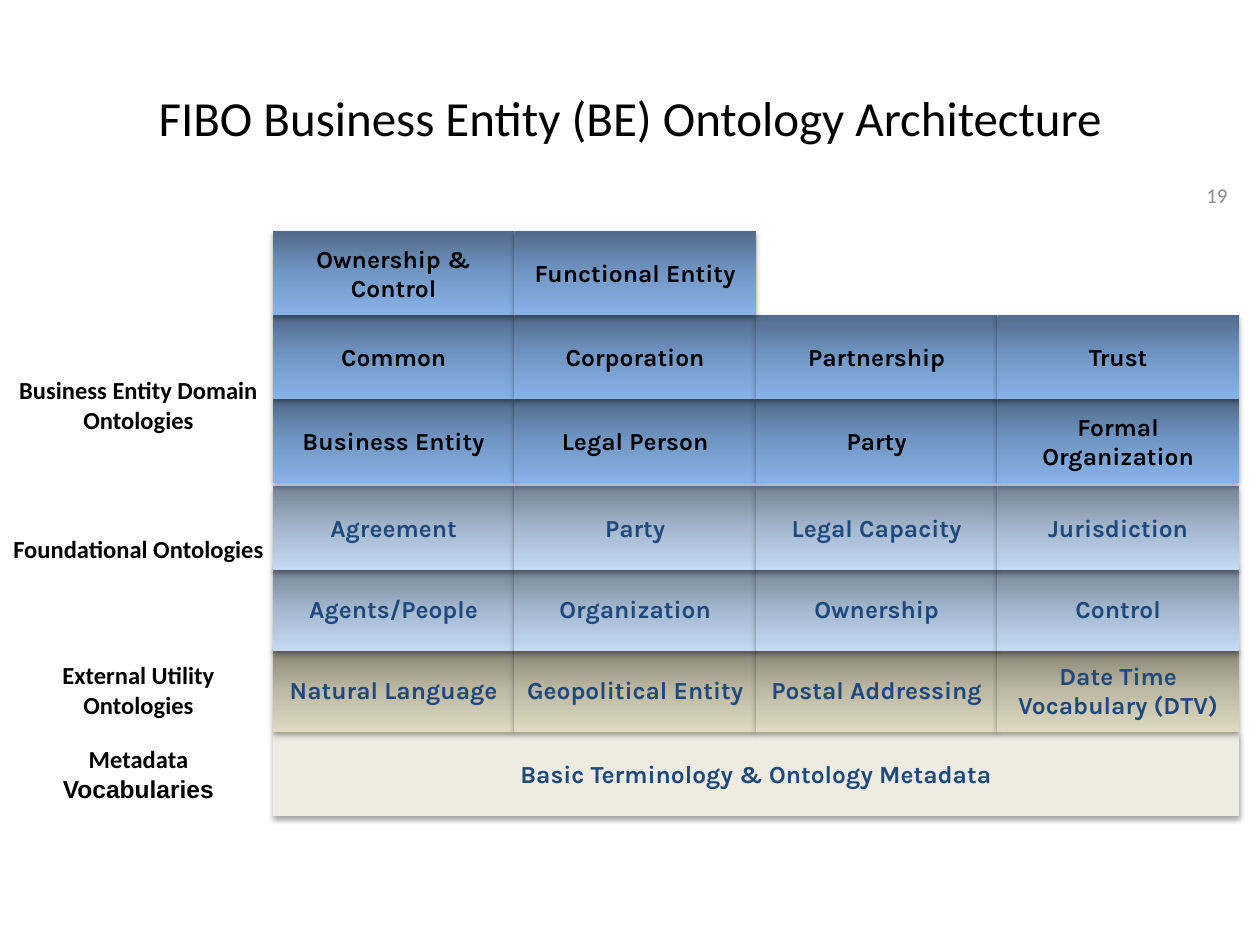
from copy import deepcopy

from lxml.etree import SubElement
from pptx import Presentation
from pptx.dml.color import RGBColor
from pptx.enum.shapes import MSO_SHAPE as Shape
from pptx.enum.text import MSO_ANCHOR as Anchor, PP_ALIGN as Align
from pptx.oxml.ns import qn
from pptx.util import Emu, Pt

BLACK = RGBColor(0x00, 0x00, 0x00)
GREY = RGBColor(0x8C, 0x8C, 0x8C)
NAVY = RGBColor(0x1F, 0x49, 0x7D)
CREAM = RGBColor(0xEE, 0xEC, 0xE1)
DOMAIN = (RGBColor(0x50, 0x6A, 0x8A), RGBColor(0x72, 0x97, 0xC5), RGBColor(0x87, 0xB3, 0xE9))
FOUNDATION = (RGBColor(0x74, 0x81, 0x91), RGBColor(0xA4, 0xB7, 0xCE), RGBColor(0xC3, 0xD9, 0xF4))
UTILITY = (RGBColor(0x84, 0x82, 0x73), RGBColor(0xBC, 0xB8, 0xA3), RGBColor(0xDF, 0xDB, 0xC2))

GRID_LEFT, GRID_WIDTH, COLUMNS, ROW_HEIGHT = 273, 966, 4, 84
LABEL_WIDTH, LABEL_HEIGHT = 277, 72

LAYERS = [
    (648, UTILITY, NAVY, ["Natural Language", "Geopolitical Entity",
                          "Postal Addressing", "Date Time Vocabulary (DTV)"]),
    (567, FOUNDATION, NAVY, ["Agents/People", "Organization", "Ownership", "Control"]),
    (486, FOUNDATION, NAVY, ["Agreement", "Party", "Legal Capacity", "Jurisdiction"]),
    (399, DOMAIN, BLACK, ["Business Entity", "Legal Person", "Party", "Formal Organization"]),
    (315, DOMAIN, BLACK, ["Common", "Corporation", "Partnership", "Trust"]),
    (231, DOMAIN, BLACK, ["Ownership & Control", "Functional Entity"]),
]

LABELS = [
    (369, [("Business Entity Domain Ontologies", "Calibri")]),
    (528, [("Foundational Ontologies", "Calibri")]),
    (654, [("External Utility Ontologies", "Calibri")]),
    (738, [("Metadata", "Calibri"), ("Vocabularies", "Arial")]),
]


def px(length):
    return Emu(round(length * 914400 / 126))


class ArchitectureSlide:
    def __init__(self, presentation):
        self.slide = presentation.slides.add_slide(presentation.slide_layouts[6])

    def add_lines(self, shape, lines, size, color, bold, align, anchor):
        frame = shape.text_frame
        frame.word_wrap = True
        frame.vertical_anchor = anchor
        for index, (text, font_name) in enumerate(lines):
            paragraph = frame.add_paragraph() if index else frame.paragraphs[0]
            paragraph.alignment = align
            run = paragraph.add_run()
            run.text = text
            run.font.name = font_name
            run.font.size = Pt(size)
            run.font.bold = bold
            run.font.color.rgb = color

    def text(self, box, lines, size=14, color=BLACK, bold=True,
             align=Align.CENTER, anchor=Anchor.TOP):
        shape = self.slide.shapes.add_textbox(*map(px, box))
        self.add_lines(shape, lines, size, color, bold, align, anchor)

    def gradient(self, shape, colors):
        fill = shape.fill
        fill.gradient()
        fill.gradient_angle = 270
        stop_list = shape.element.spPr.find(".//" + qn("a:gsLst"))
        stop_list.insert(1, deepcopy(stop_list[0]))
        for stop, color, position in zip(fill.gradient_stops, colors, (0, 0.5, 1)):
            stop.color.rgb = color
            stop.position = position

    def shadow(self, shape):
        shape.shadow.inherit = False
        effects = shape.element.spPr.find(qn("a:effectLst"))
        outer = SubElement(effects, qn("a:outerShdw"), blurRad="40000", dist="23000",
                           dir="5400000", rotWithShape="0")
        color = SubElement(outer, qn("a:srgbClr"), val=str(BLACK))
        SubElement(color, qn("a:alpha"), val="35000")

    def block(self, box, text, fill, color):
        shape = self.slide.shapes.add_shape(Shape.RECTANGLE, *map(px, box))
        if isinstance(fill, RGBColor):
            shape.fill.solid()
            shape.fill.fore_color.rgb = fill
        else:
            self.gradient(shape, fill)
        shape.line.fill.background()
        self.shadow(shape)
        self.add_lines(shape, [(text, "Karla")], 14, color, True, Align.CENTER, Anchor.MIDDLE)

    def layer(self, top, fill, color, names):
        width = GRID_WIDTH / COLUMNS
        for column, name in enumerate(names):
            left = GRID_LEFT + column * width
            self.block((left, top, width, ROW_HEIGHT), name, fill, color)


def main():
    presentation = Presentation()
    presentation.slide_width = px(1260)
    presentation.slide_height = px(945)
    architecture = ArchitectureSlide(presentation)
    architecture.text((63, 38, 1134, 157),
                      [("FIBO Business Entity (BE) Ontology Architecture", "Calibri")],
                      size=28, bold=False, anchor=Anchor.MIDDLE)
    architecture.text((1163, 170, 77, 50), [("19", "Calibri")], size=12, color=GREY,
                      bold=False, align=Align.RIGHT, anchor=Anchor.MIDDLE)
    architecture.block((GRID_LEFT, 732, GRID_WIDTH, ROW_HEIGHT),
                       "Basic Terminology & Ontology Metadata", CREAM, NAVY)
    for layer in LAYERS:
        architecture.layer(*layer)
    for top, lines in LABELS:
        architecture.text((0, top, LABEL_WIDTH, LABEL_HEIGHT), lines)
    presentation.save("out.pptx")


if __name__ == "__main__":
    main()
